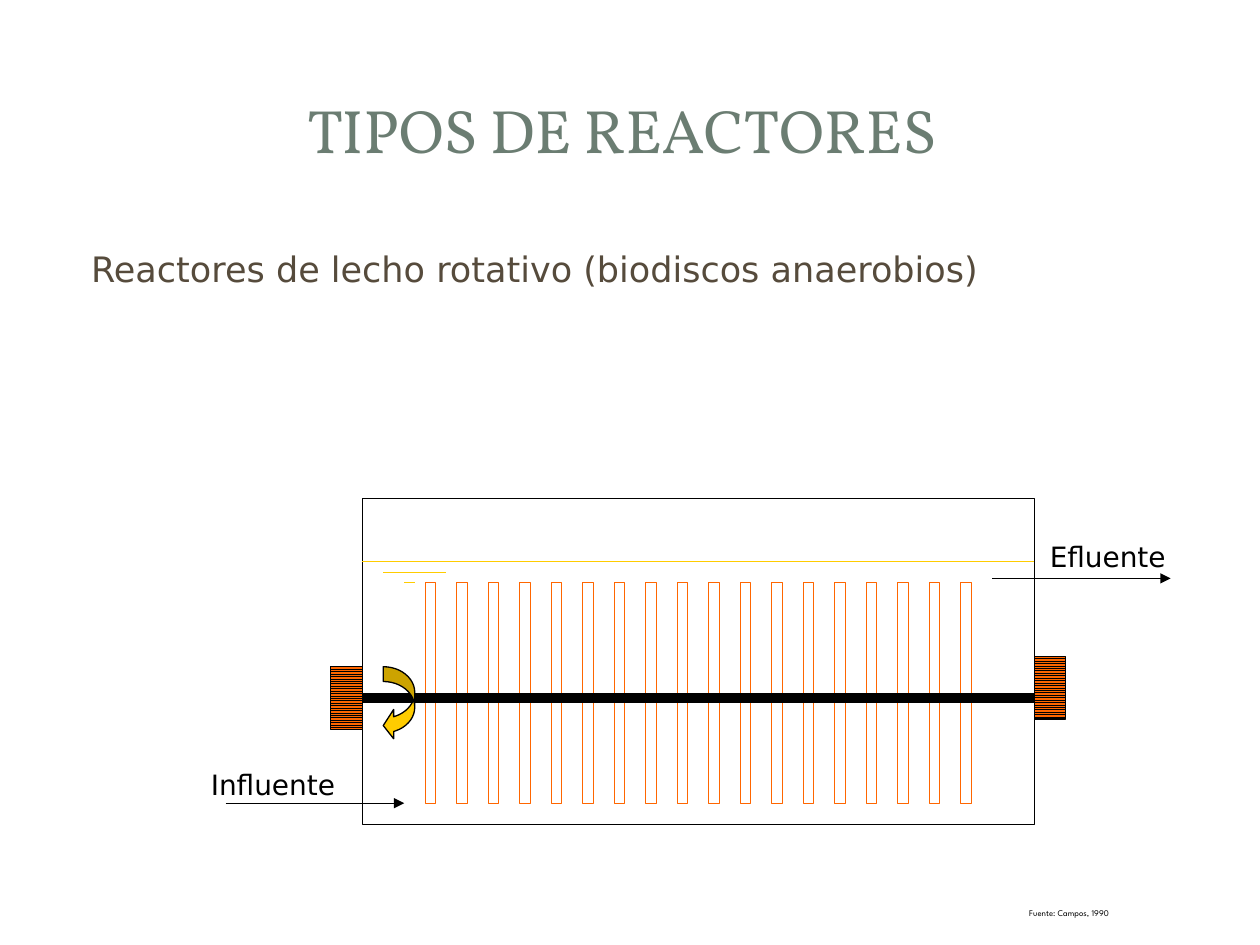
from dataclasses import dataclass

from lxml import etree
from pptx import Presentation
from pptx.dml.color import RGBColor
from pptx.enum.dml import MSO_PATTERN
from pptx.enum.shapes import MSO_CONNECTOR, MSO_SHAPE
from pptx.enum.text import MSO_ANCHOR, PP_ALIGN
from pptx.oxml.ns import qn
from pptx.util import Pt

RECT = MSO_SHAPE.RECTANGLE
TURN = MSO_SHAPE.CURVED_LEFT_ARROW
STRAIGHT = MSO_CONNECTOR.STRAIGHT
STRIPES = MSO_PATTERN.LIGHT_HORIZONTAL
LEFT, CENTER = PP_ALIGN.LEFT, PP_ALIGN.CENTER
TOP, MIDDLE = MSO_ANCHOR.TOP, MSO_ANCHOR.MIDDLE


@dataclass(frozen=True)
class Theme:
    black: str = "000000"
    white: str = "FFFFFF"
    sage: str = "6B7D72"
    brown: str = "564B3C"
    orange: str = "FF6600"
    yellow: str = "FFCC00"
    serif: str = "Vollkorn"
    sans: str = "DejaVu Sans"
    small: str = "League Spartan"
    title: float = 35
    body: float = 20
    label: float = 16
    note: float = 5
    thin: float = 0.75
    thick: float = 6


THEME = Theme()


def rgb(color):
    return RGBColor.from_string(color)


def add_text(slide, box, text, font, size, color, align=LEFT, anchor=TOP):
    frame = slide.shapes.add_textbox(*map(Pt, box)).text_frame
    frame.word_wrap = True
    frame.vertical_anchor = anchor
    para = frame.paragraphs[0]
    para.alignment = align
    run = para.add_run()
    run.text = text
    run.font.name = font
    run.font.size = Pt(size)
    run.font.color.rgb = rgb(color)
    return para


def add_label(slide, box, text):
    add_text(slide, box, text, THEME.sans, THEME.label, THEME.black,
             CENTER, MIDDLE)


def add_block(slide, box, fill=THEME.white, line=THEME.black, kind=RECT):
    shape = slide.shapes.add_shape(kind, *map(Pt, box))
    shape.shadow.inherit = False
    shape.fill.solid()
    shape.fill.fore_color.rgb = rgb(fill)
    shape.line.color.rgb = rgb(line)
    shape.line.width = Pt(THEME.thin)
    return shape


def add_motor(slide, left, top):
    fill = add_block(slide, (left, top, 18, 36)).fill
    fill.patterned()
    fill.pattern = STRIPES
    fill.fore_color.rgb = rgb(THEME.black)
    fill.back_color.rgb = rgb(THEME.orange)


def add_line(slide, start, end, y, color=THEME.black, width=THEME.thin,
             arrow=False):
    line = slide.shapes.add_connector(STRAIGHT, Pt(start), Pt(y), Pt(end), Pt(y))
    line.line.color.rgb = rgb(color)
    line.line.width = Pt(width)
    if arrow:
        tail = etree.SubElement(line.line._get_or_add_ln(), qn("a:tailEnd"))
        tail.set("type", "triangle")
    etree.SubElement(line._element.spPr, qn("a:effectLst"))


def add_tank(slide):
    left, width, level = 207, 384, 321
    right = left + width
    add_block(slide, (left, 285, width, 36))
    add_block(slide, (left, level, width, 150))
    for i in range(18):
        add_block(slide, (243 + 18 * i, 333, 6, 126), line=THEME.orange)
    add_line(slide, left, right, 399, width=THEME.thick)
    add_motor(slide, left - 18, 381)
    add_motor(slide, right, 375)
    turn = add_block(slide, (219, 381, 18, 42), THEME.yellow, kind=TURN)
    for i, value in enumerate((0.47, 0.93, 0.33)):
        turn.adjustments[i] = value
    for i, (start, end) in enumerate(((left, right), (219, 255), (231, 237))):
        add_line(slide, start, end, level + 6 * i, THEME.yellow)


def add_flows(slide):
    add_line(slide, 129, 231, 459, arrow=True)
    add_line(slide, 567, 669, 330.5, arrow=True)
    add_label(slide, (105, 435, 102, 26.5), "Influente")
    add_label(slide, (591, 304.5, 84, 26.5), "Efluente")


def main():
    deck = Presentation()
    deck.slide_width, deck.slide_height = Pt(720), Pt(540)
    slide = deck.slides.add_slide(deck.slide_layouts[6])
    add_text(slide, (34, 32.5, 650, 82), "TIPOS DE REACTORES ", THEME.serif,
             THEME.title, THEME.sage, CENTER, MIDDLE)
    body = add_text(slide, (36, 138, 648, 344),
                    "Reactores de lecho rotativo (biodiscos anaerobios)",
                    THEME.sans, THEME.body, THEME.brown)
    body.space_before = Pt(4)
    body._p.get_or_add_pPr().set("marL", str(Pt(9)))
    add_tank(slide)
    add_flows(slide)
    add_text(slide, (581, 515, 114.5, 13.5), "Fuente: Campos, 1990",
             THEME.small, THEME.note, THEME.black)
    deck.save("out.pptx")


if __name__ == "__main__":
    main()
